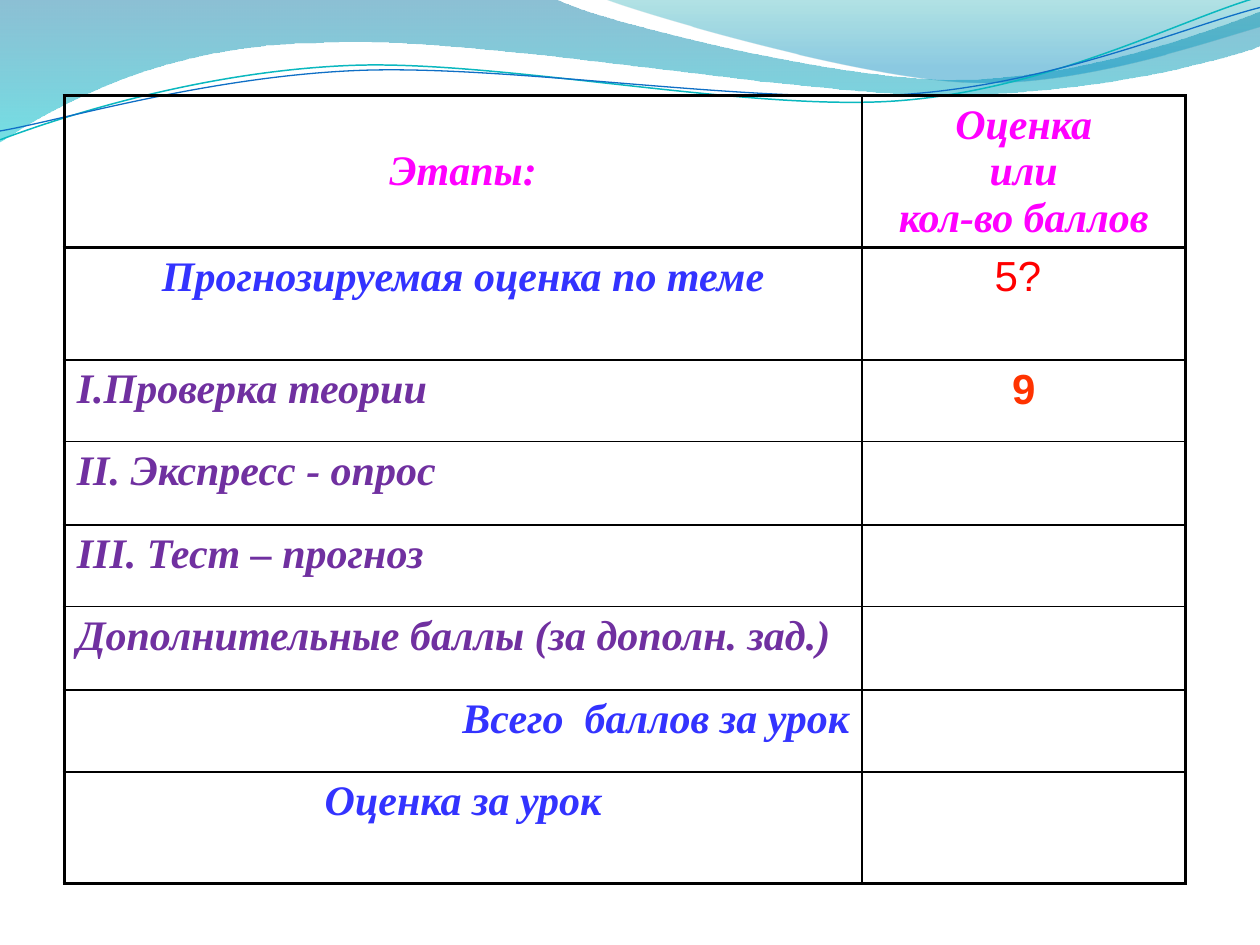
"""Build the lesson self-assessment slide: a score table under a wave header."""
from dataclasses import dataclass
from math import cos, radians, sin
from typing import Optional

from lxml.etree import SubElement
from pptx import Presentation
from pptx.dml.color import RGBColor
from pptx.enum.text import MSO_ANCHOR, PP_ALIGN
from pptx.oxml.ns import qn
from pptx.util import Pt

PX = 9144
COLORS = {
    "black": "000000", "magenta": "FF00FF", "blue": "3333FF", "purple": "7030A0",
    "red": "FF0000", "orange": "FF3300", "teal_line": "0AB8BF", "blue_line": "0F6FC6",
    "deep": "0074A1", "cyan": "00C6CF", "sea": "00A1A9", "sky": "008BBF",
}
SERIF = {"name": "Times New Roman", "size": Pt(24), "bold": True, "italic": True}
SANS = {"name": "Arial", "size": Pt(24), "bold": False, "italic": False}
SANS_BOLD = {**SANS, "bold": True}
LEFT, CENTER, RIGHT = PP_ALIGN.LEFT, PP_ALIGN.CENTER, PP_ALIGN.RIGHT


@dataclass
class Wave:
    segments: list
    stops: tuple = ()
    line: Optional[str] = None
    width: float = 0
    rotation: float = 0
    center: tuple = (0, 0)


@dataclass
class Entry:
    lines: tuple = ()
    color: str = "purple"
    align: PP_ALIGN = LEFT
    font: Optional[dict] = None


WAVES = [
    Wave([(0, -1), (440, -1), (476, 17, 664, 63, 758, 63), (853, 63, 958, 26, 1000, 9),
          (1001, 36), (983, 44, 870, 76, 746, 75), (622, 75, 382, 28, 257, 34),
          (129, 35, 46, 83, -1, 113)],
         stops=((0, "deep", 45), (100, "cyan", 55))),
    Wave([(479, -1), (509, 11, 682, 62, 769, 65), (856, 69, 961, 32, 1000, 21), (1000, 0)],
         stops=((0, "sea", 30), (80, "sky", 45))),
    Wave([(0, 111), (48, 93, 158, 57, 277, 52), (395, 47, 593, 89, 713, 80),
          (833, 71, 938, 15, 998, -2)],
         line="teal_line", width=0.85, rotation=357.3, center=(499, 58)),
    Wave([(0, 104), (47, 96, 164, 61, 283, 56), (403, 51, 597, 83, 717, 75),
          (836, 67, 941, 21, 1000, 6)],
         line="blue_line", width=0.75, rotation=357.3, center=(500, 59)),
]
COLS = [633, 257]
ROWS = [110, 89, 65, 66, 65, 66, 65, 89]
ENTRIES = [
    (Entry(("Этапы:",), "magenta", CENTER),
     Entry(("Оценка", "или", "кол-во баллов"), "magenta", CENTER)),
    (Entry(("Прогнозируемая оценка по теме",), "blue", CENTER),
     Entry(("5? ",), "red", CENTER, SANS)),
    (Entry(("I.Проверка теории",)), Entry(("9",), "orange", CENTER, SANS_BOLD)),
    (Entry(("II. Экспресс - опрос",)), Entry()),
    (Entry(("III. Тест – прогноз",)), Entry()),
    (Entry(("Дополнительные баллы (за дополн. зад.)",)), Entry()),
    (Entry(("Всего  баллов за урок",), "blue", RIGHT), Entry()),
    (Entry(("Оценка за урок",), "blue", CENTER), Entry()),
]


def rgb(name: str) -> RGBColor:
    return RGBColor.from_string(COLORS[name])


def to_points(segment: tuple, wave: Wave) -> list:
    a, (cx, cy) = radians(-wave.rotation), wave.center
    return [(round((cx + (x - cx) * cos(a) - (y - cy) * sin(a)) * PX),
             round((cy + (x - cx) * sin(a) + (y - cy) * cos(a)) * PX))
            for x, y in zip(segment[::2], segment[1::2])]


def bend(sp_pr, segments: list, left: int, top: int) -> None:
    for ln_to, pts in zip(list(sp_pr.iter(qn("a:lnTo"))), segments):
        if len(pts) == 3:
            curve = SubElement(ln_to.getparent(), qn("a:cubicBezTo"))
            for x, y in pts:
                SubElement(curve, qn("a:pt"), x=str(x - left), y=str(y - top))
            ln_to.getparent().replace(ln_to, curve)


def add_gradient(sp_pr, stops: tuple) -> None:
    grad = SubElement(sp_pr, qn("a:gradFill"), rotWithShape="1")
    sp_pr.find(qn("a:custGeom")).addnext(grad)
    gs_lst = SubElement(grad, qn("a:gsLst"))
    for pos, color, alpha in stops:
        gs = SubElement(gs_lst, qn("a:gs"), pos=str(pos * 1000))
        clr = SubElement(gs, qn("a:srgbClr"), val=COLORS[color])
        SubElement(clr, qn("a:alpha"), val=str(alpha * 1000))
    SubElement(grad, qn("a:lin"), ang="5400000", scaled="1")


def draw_wave(shapes, wave: Wave) -> None:
    segments = [to_points(segment, wave) for segment in wave.segments]
    fb = shapes.build_freeform(*segments[0][0])
    fb.add_line_segments([pts[-1] for pts in segments[1:]], close=bool(wave.stops))
    sp = fb.convert_to_shape()
    bend(sp._element.spPr, segments[1:], sp.left, sp.top)
    sp.shadow.inherit = False
    sp.rotation = wave.rotation
    if wave.stops:
        add_gradient(sp._element.spPr, wave.stops)
        sp.line.fill.background()
    else:
        sp.fill.background()
        sp.line.color.rgb = rgb(wave.line)
        sp.line.width = Pt(wave.width)


def set_borders(cell, widths: dict) -> None:
    tc_pr = cell._tc.get_or_add_tcPr()
    for side, width in widths.items():
        ln = SubElement(tc_pr, qn(f"a:ln{side}"), w=str(Pt(width)))
        fill = SubElement(ln, qn("a:solidFill"))
        SubElement(fill, qn("a:srgbClr"), val=COLORS["black"])


def fill_cell(cell, entry: Entry) -> None:
    tf = cell.text_frame
    for i, line in enumerate(entry.lines):
        p = tf.add_paragraph() if i else tf.paragraphs[0]
        p.alignment = entry.align
        r = p.add_run()
        r.text = line
        r.font.color.rgb = rgb(entry.color)
        for key, value in (entry.font or SERIF).items():
            setattr(r.font, key, value)


def draw_table(shapes, left: int, top: int, height: int) -> None:
    frame = shapes.add_table(len(ROWS), len(COLS), left * PX, top * PX,
                             sum(COLS) * PX, height * PX)
    table = frame.table
    table.first_row = table.horz_banding = False
    for col, width in zip(table.columns, COLS):
        col.width = width * PX
    last_row, last_col = len(ROWS) - 1, len(COLS) - 1
    for i, (row, row_height) in enumerate(zip(table.rows, ROWS)):
        row.height = row_height * PX
        for j, cell in enumerate(row.cells):
            set_borders(cell, {"L": 2 if j == 0 else 1, "R": 2 if j == last_col else 1,
                               "T": 2 if i <= 1 else 1, "B": 2 if i in (0, last_row) else 1})
            cell.fill.background()
            cell.vertical_anchor = MSO_ANCHOR.TOP if i else MSO_ANCHOR.MIDDLE
            fill_cell(cell, ENTRIES[i][j])
    frame.height = height * PX


def main() -> None:
    prs = Presentation()
    prs.slide_width, prs.slide_height = 1000 * PX, 750 * PX
    s = prs.slides.add_slide(prs.slide_layouts[6])
    for wave in WAVES:
        draw_wave(s.shapes, wave)
    draw_table(s.shapes, 51, 76, 635)
    prs.save("out.pptx")


if __name__ == "__main__":
    main()
